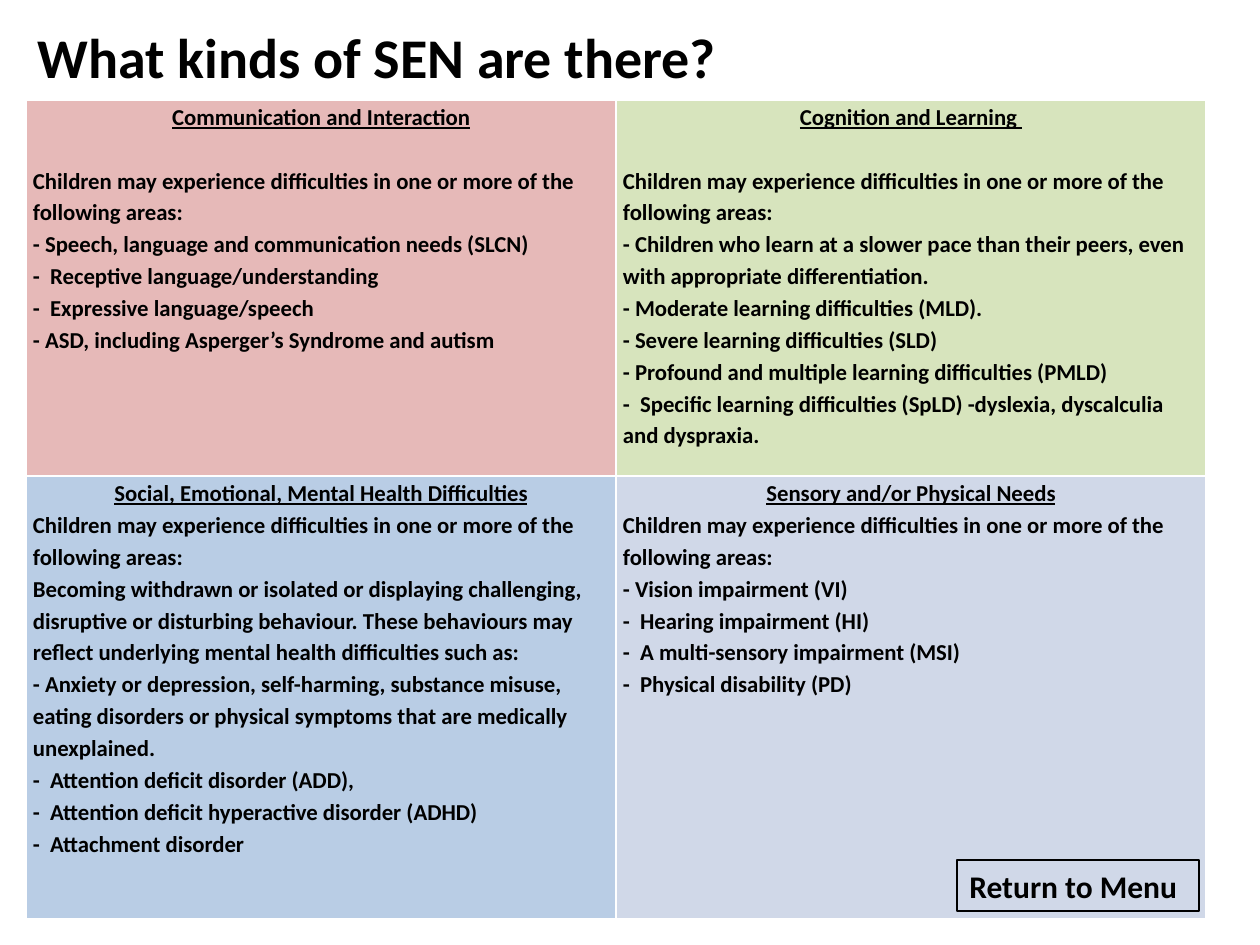
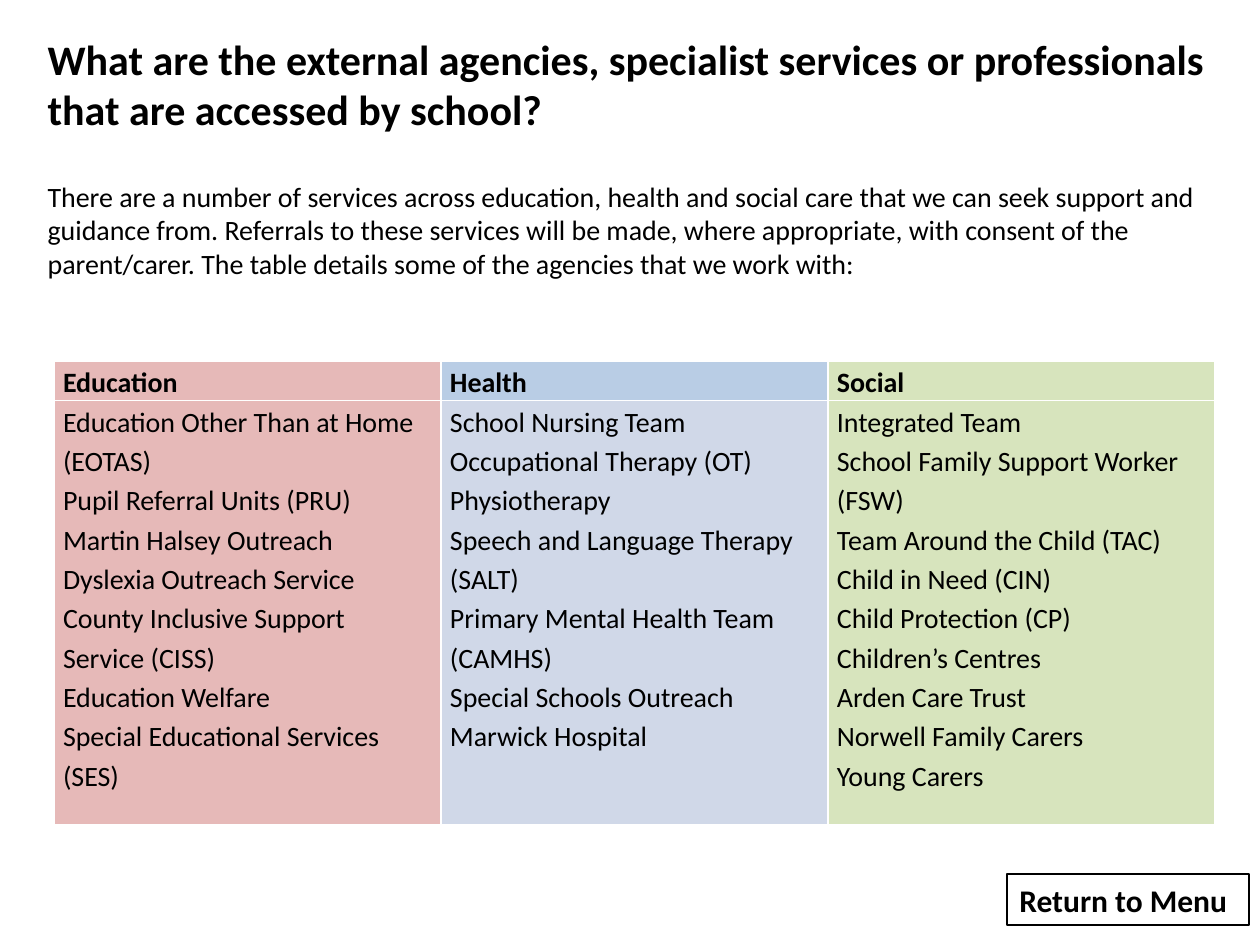
from lxml import etree
from pptx import Presentation
from pptx.dml.color import RGBColor
from pptx.enum.shapes import MSO_SHAPE
from pptx.enum.text import MSO_ANCHOR, MSO_AUTO_SIZE, PP_ALIGN
from pptx.oxml.ns import qn
from pptx.util import Emu, Pt

RECTANGLE = MSO_SHAPE.RECTANGLE
TOP, MIDDLE = MSO_ANCHOR.TOP, MSO_ANCHOR.MIDDLE
LEFT, CENTER = PP_ALIGN.LEFT, PP_ALIGN.CENTER
NO_AUTOFIT = MSO_AUTO_SIZE.NONE

EMU_PER_PIXEL = 914400 / 126
SLIDE_WIDTH, SLIDE_HEIGHT = 1260, 945
FONT = "Calibri"
BLACK = "000000"
PINK, GREEN, BLUE, LILAC = "E6B9B8", "D7E4BD", "B9CDE5", "D0D8E8"
CELL_LINE_SPACING = 1.15
TITLE_ONLY, TITLE_AND_BODY = 5, 1
MENU_LABEL = "Return to Menu"
MENU_SIZE = (242, 51)

INTRODUCTION = "Children may experience difficulties in one or more of the following areas:"

# Each kind of need: heading, fill, points after the heading gap, lines
NEEDS = [
    [
        ("Communication and Interaction", PINK, 18, [
            INTRODUCTION,
            "- Speech, language and communication needs (SLCN)",
            "- \u00a0Receptive language/understanding",
            "- \u00a0Expressive language/speech",
            "- ASD, including Asperger’s Syndrome and autism",
        ]),
        ("Cognition and Learning ", GREEN, 18, [
            INTRODUCTION,
            "- Children who learn at a slower pace than their peers, even "
            "with appropriate differentiation.",
            "- Moderate learning difficulties (MLD).",
            "- Severe learning difficulties (SLD)",
            "- Profound and multiple learning difficulties (PMLD)",
            "- \u00a0Specific learning difficulties (SpLD) -dyslexia, "
            "dyscalculia and dyspraxia.",
        ]),
    ],
    [
        ("Social, Emotional, Mental Health Difficulties", BLUE, 0, [
            INTRODUCTION,
            "Becoming withdrawn or isolated or displaying challenging, "
            "disruptive or disturbing behaviour. These behaviours may "
            "reflect underlying mental health difficulties such as:",
            "- Anxiety or depression, self-harming, substance misuse, eating "
            "disorders or physical symptoms that are medically unexplained.",
            "- \u00a0Attention deficit disorder (ADD),",
            "- \u00a0Attention deficit hyperactive disorder (ADHD)",
            "- \u00a0Attachment disorder",
        ]),
        ("Sensory and/or Physical Needs", LILAC, 0, [
            INTRODUCTION,
            "- Vision impairment (VI)",
            "- \u00a0Hearing impairment (HI)",
            "- \u00a0A multi-sensory impairment (MSI)",
            "- \u00a0Physical disability (PD)",
        ]),
    ],
]

AGENCY_INTRODUCTION = [
    "There are a number of services across education, health and social care "
    "that we can seek support and",
    "guidance from. Referrals to these services will be made, where "
    "appropriate, with consent of the",
    "parent/carer. The table details some of the agencies that we work with:",
]

# Each sector: heading, heading fill, list fill, agencies
AGENCIES = [
    ("Education", PINK, PINK, [
        "Education Other Than at Home (EOTAS)",
        "Pupil Referral Units (PRU)",
        "Martin Halsey Outreach",
        "Dyslexia Outreach Service",
        "County Inclusive Support Service (CISS)",
        "Education Welfare",
        "Special Educational Services (SES)",
    ]),
    ("Health", BLUE, LILAC, [
        "School Nursing Team",
        "Occupational Therapy (OT)",
        "Physiotherapy",
        "Speech and Language Therapy (SALT)",
        "Primary Mental Health Team (CAMHS)",
        "Special Schools Outreach",
        "Marwick Hospital",
    ]),
    ("Social", GREEN, GREEN, [
        "Integrated Team",
        "School Family Support Worker (FSW)",
        "Team Around the Child (TAC)",
        "Child in Need (CIN)",
        "Child Protection (CP)",
        "Children’s Centres",
        "Arden Care Trust",
        "Norwell Family Carers",
        "Young Carers",
    ]),
]


def pixels(length):
    """Turn whole pixels into EMU."""
    return Emu(round(length * EMU_PER_PIXEL))


def color(hex_value):
    """Turn a hex string into a colour."""
    return RGBColor.from_string(hex_value)


def write(text_frame, lines, size, bold=False):
    """Fill a text frame with one left-aligned paragraph per line."""
    text_frame.text = "\n".join(lines)
    for paragraph in text_frame.paragraphs:
        paragraph.alignment = LEFT
        paragraph.space_before = Pt(0)
        for run in paragraph.runs:
            run.font.name = FONT
            run.font.size = Pt(size)
            run.font.bold = bold
            run.font.color.rgb = color(BLACK)


def place(shape, left, top, width, height):
    """Move and size a shape."""
    shape.left, shape.top = pixels(left), pixels(top)
    shape.width, shape.height = pixels(width), pixels(height)


def fill_placeholder(placeholder, box, lines, size, bold, anchor, wrap=True):
    """Position a placeholder and write its text."""
    place(placeholder, *box)
    text_frame = placeholder.text_frame
    text_frame.auto_size = NO_AUTOFIT
    text_frame.word_wrap = wrap
    text_frame.vertical_anchor = anchor
    write(text_frame, lines, size, bold)


def remove_bullets(text_frame):
    """Turn list items into plain, unindented paragraphs."""
    for paragraph in text_frame.paragraphs:
        properties = paragraph._p.get_or_add_pPr()
        properties.set("marL", "0")
        properties.set("indent", "0")
        etree.SubElement(properties, qn("a:buNone"))


def add_grid(slide, left, top, column_width, columns, row_heights):
    """Add a table with equal columns and the given row heights."""
    frame = slide.shapes.add_table(
        len(row_heights), columns, pixels(left), pixels(top),
        pixels(column_width * columns), pixels(sum(row_heights)))
    table = frame.table
    table.horz_banding = False
    for column in table.columns:
        column.width = pixels(column_width)
    for row, height in zip(table.rows, row_heights):
        row.height = pixels(height)
    return table


def fill_cell(cell, lines, fill, size, bold, margin):
    """Write and colour one table cell."""
    cell.margin_left = cell.margin_right = pixels(margin)
    cell.margin_top = cell.margin_bottom = 0
    cell.fill.solid()
    cell.fill.fore_color.rgb = color(fill)
    write(cell.text_frame, lines, size, bold)
    for paragraph in cell.text_frame.paragraphs:
        paragraph.line_spacing = CELL_LINE_SPACING


def add_menu_button(slide, left, top):
    """Add the outlined button that all slides share."""
    width, height = MENU_SIZE
    button = slide.shapes.add_shape(
        RECTANGLE, pixels(left), pixels(top), pixels(width), pixels(height))
    button.shadow.inherit = False
    button.fill.background()
    button.line.color.rgb = color(BLACK)
    button.line.width = Pt(0.75)
    write(button.text_frame, [MENU_LABEL], 18, bold=True)


def build_needs_slide(presentation):
    """Build the slide with the four kinds of need."""
    slide = presentation.slides.add_slide(presentation.slide_layouts[TITLE_ONLY])
    fill_placeholder(slide.shapes.title, (25, 16, 711, 81),
                     ["What kinds of SEN are there?"], 32, True, TOP, wrap=False)
    table = add_grid(slide, 26, 100, 590, 2, [376, 443])
    for row, needs in enumerate(NEEDS):
        for column, (heading, fill, gap, lines) in enumerate(needs):
            cell = table.cell(row, column)
            fill_cell(cell, [heading] + lines, fill, 13, True, 7)
            paragraph = cell.text_frame.paragraphs[0]
            paragraph.alignment = CENTER
            paragraph.space_after = Pt(gap)
            paragraph.runs[0].font.underline = True
    add_menu_button(slide, 957, 860)


def build_agencies_slide(presentation):
    """Build the slide with the agencies of each sector."""
    slide = presentation.slides.add_slide(presentation.slide_layouts[TITLE_AND_BODY])
    fill_placeholder(slide.shapes.title, (35, 27, 1201, 115),
                     ["What are the external agencies, specialist services or "
                      "professionals that are accessed by school?"], 24, True, TOP)
    body = slide.placeholders[1]
    fill_placeholder(body, (35, 172, 1193, 115), AGENCY_INTRODUCTION, 16, False, MIDDLE)
    remove_bullets(body.text_frame)
    table = add_grid(slide, 54, 361, 387, 3, [38, 424])
    for column, (heading, heading_fill, fill, agencies) in enumerate(AGENCIES):
        fill_cell(table.cell(0, column), [heading], heading_fill, 16, True, 9)
        fill_cell(table.cell(1, column), agencies, fill, 16, False, 9)
    add_menu_button(slide, 1007, 874)


presentation = Presentation()
presentation.slide_width = pixels(SLIDE_WIDTH)
presentation.slide_height = pixels(SLIDE_HEIGHT)
build_needs_slide(presentation)
build_agencies_slide(presentation)
presentation.save("out.pptx")
